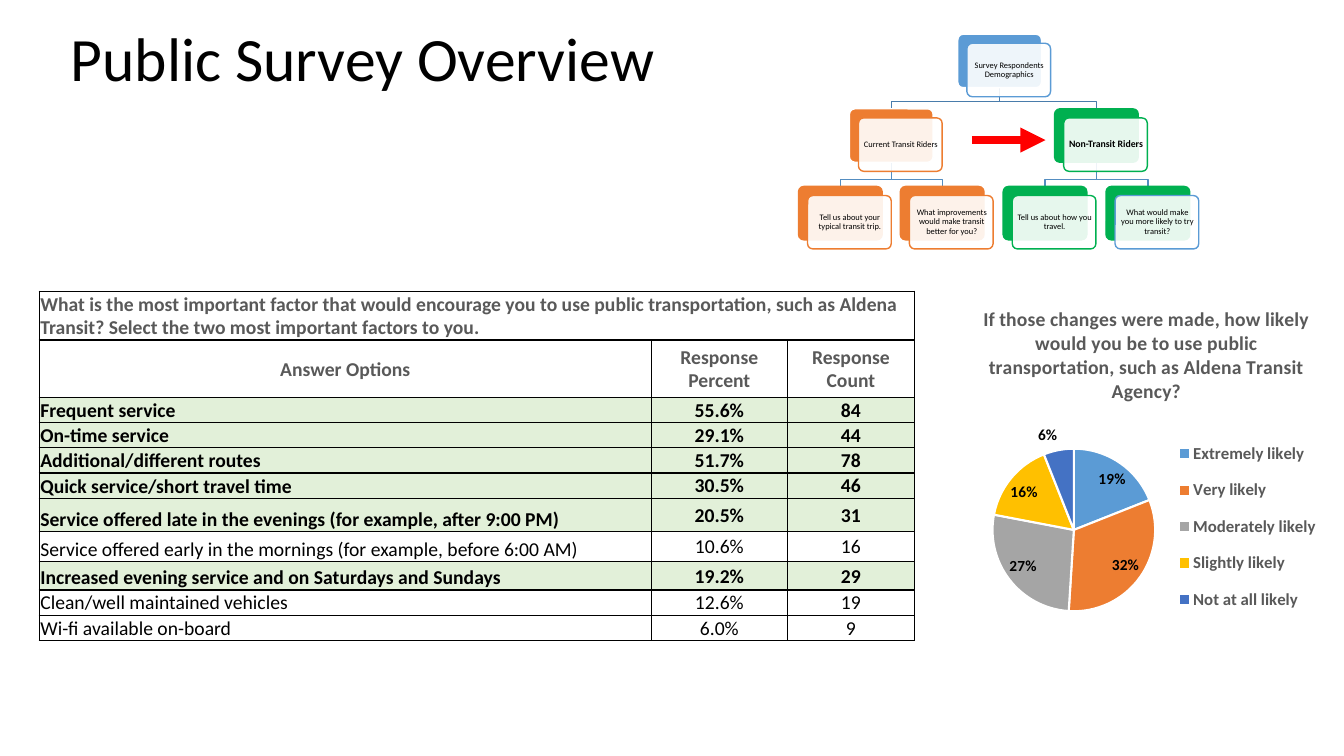
from lxml.etree import SubElement
from pptx import Presentation
from pptx.chart.data import CategoryChartData
from pptx.dml.color import RGBColor
from pptx.enum.chart import XL_CHART_TYPE, XL_LABEL_POSITION, XL_LEGEND_POSITION
from pptx.enum.shapes import MSO_CONNECTOR, MSO_SHAPE
from pptx.enum.text import MSO_ANCHOR, PP_ALIGN
from pptx.oxml import parse_xml
from pptx.oxml.ns import nsdecls, qn
from pptx.util import Inches, Pt

BLACK = RGBColor(0x00, 0x00, 0x00)
WHITE = RGBColor(0xFF, 0xFF, 0xFF)
GRAY = RGBColor(0x59, 0x59, 0x59)
BLUE = RGBColor(0x5B, 0x9B, 0xD5)
ORANGE = RGBColor(0xED, 0x7D, 0x31)
GREEN = RGBColor(0x00, 0xB0, 0x50)
RED = RGBColor(0xFF, 0x00, 0x00)
PALE_GREEN = RGBColor(0xE2, 0xF0, 0xD9)
UPPER_LINK = RGBColor(0x49, 0x7C, 0xAB)
LOWER_LINK = RGBColor(0x53, 0x8D, 0xC1)
SLICE_COLORS = [BLUE, ORANGE, RGBColor(0xA5, 0xA5, 0xA5),
                RGBColor(0xFF, 0xC0, 0x00), RGBColor(0x44, 0x72, 0xC4)]

CARD_WIDTH, CARD_HEIGHT, CARD_OFFSET = 0.83, 0.53, 0.09
LEVEL_TOPS = [0.34, 1.08, 1.85]
LEAF_LEFTS = [7.92, 8.93, 9.95, 10.97]

QUESTION = ("What is the most important factor that would encourage you to use public "
            "transportation, such as Aldena Transit? Select the two most important "
            "factors to you.")
HEADINGS = ["Answer Options", "Response Percent", "Response Count"]
ANSWERS = [  # option, percent, count, highlighted
    ("Frequent service", "55.6%", "84", True),
    ("On-time service", "29.1%", "44", True),
    ("Additional/different routes", "51.7%", "78", True),
    ("Quick service/short travel time", "30.5%", "46", True),
    ("Service offered late in the evenings (for example, after 9:00 PM)",
     "20.5%", "31", True),
    ("Service offered early in the mornings (for example, before 6:00 AM)",
     "10.6%", "16", False),
    ("Increased evening service and on Saturdays and Sundays", "19.2%", "29", True),
    ("Clean/well maintained vehicles", "12.6%", "19", False),
    ("Wi-fi available on-board", "6.0%", "9", False),
]
COLUMN_WIDTHS = [6.07, 1.35, 1.26]
ROW_HEIGHTS = [0.48, 0.57, 0.25, 0.25, 0.25, 0.25, 0.33, 0.3, 0.28, 0.25, 0.25]
LIKELIHOOD = {"Extremely likely": 19, "Very likely": 32, "Moderately likely": 27,
              "Slightly likely": 16, "Not at all likely": 6}
CHART_TITLE = ("If those changes were made, how likely would you be to use public "
               "transportation, such as Aldena Transit Agency?")


def set_font(font, size, color, bold=False):
    font.name = "Calibri"
    font.size = Pt(size)
    font.color.rgb = color
    font.bold = bold


def add_title(page, text):
    title = page.shapes.title
    title.left, title.top = Inches(0.6), Inches(0.1)
    title.width, title.height = Inches(12), Inches(1.02)
    title.text_frame.text = text
    title.text_frame.vertical_anchor = MSO_ANCHOR.MIDDLE
    para = title.text_frame.paragraphs[0]
    para.alignment = PP_ALIGN.LEFT
    para.line_spacing = 0.9
    set_font(para.font, 44, BLACK)


def add_rounded_box(page, left, top, fill, line):
    box = page.shapes.add_shape(MSO_SHAPE.ROUNDED_RECTANGLE, Inches(left), Inches(top),
                                Inches(CARD_WIDTH), Inches(CARD_HEIGHT))
    box.adjustments[0] = 0.1
    box.shadow.inherit = False
    box.fill.solid()
    box.fill.fore_color.rgb = fill
    box.line.color.rgb = line
    box.line.width = Pt(1)
    return box


def add_card(page, left, level, text, fill, back_line, front_line, size=6, bold=False):
    """Add a coloured box with a translucent text box set off in front of it."""
    top = LEVEL_TOPS[level]
    add_rounded_box(page, left, top, fill, back_line)
    front = add_rounded_box(page, left + CARD_OFFSET, top + CARD_OFFSET, WHITE, front_line)
    color = front.fill._xPr.find(qn("a:solidFill"))[0]
    SubElement(color, qn("a:alpha")).set("val", "90000")
    frame = front.text_frame
    frame.word_wrap = True
    frame.vertical_anchor = MSO_ANCHOR.MIDDLE
    frame.margin_left, frame.margin_right = Inches(0.03), Inches(0.02)
    frame.margin_top = frame.margin_bottom = Inches(0.03)
    frame.text = text
    para = frame.paragraphs[0]
    para.alignment = PP_ALIGN.CENTER
    para.line_spacing = 0.9
    set_font(para.font, size, BLACK, bold)


def add_link(page, parent_left, child_left, child_level, color):
    """Add a bent line from the foot of a parent card to the head of its child."""
    start_x, end_x = parent_left + CARD_WIDTH / 2, child_left + CARD_WIDTH / 2
    start_y, end_y = LEVEL_TOPS[child_level - 1] + CARD_HEIGHT, LEVEL_TOPS[child_level]
    bend_y = end_y - 0.07
    builder = page.shapes.build_freeform(Inches(start_x), Inches(start_y))
    builder.add_line_segments([(Inches(x), Inches(y)) for x, y in
                               [(start_x, bend_y), (end_x, bend_y), (end_x, end_y)]],
                              close=False)
    link = builder.convert_to_shape()
    link.shadow.inherit = False
    link.fill.background()
    link.line.color.rgb = color
    link.line.width = Pt(1)


def add_respondent_tree(page):
    root, riders, others = 9.5, sum(LEAF_LEFTS[:2]) / 2, sum(LEAF_LEFTS[2:]) / 2
    for i, leaf in enumerate(LEAF_LEFTS):
        add_link(page, riders if i < 2 else others, leaf, 2, LOWER_LINK)
    for branch in (riders, others):
        add_link(page, root, branch, 1, UPPER_LINK)

    add_card(page, root, 0, "Survey Respondents Demographics", BLUE, WHITE, BLUE)
    add_card(page, riders, 1, "Current Transit Riders", ORANGE, WHITE, ORANGE)
    add_card(page, others, 1, "Non-Transit Riders", GREEN, GREEN, GREEN, 7, True)
    for left, text, fill, front_line in zip(
            LEAF_LEFTS,
            ["Tell us about your typical transit trip.",
             "What improvements would make transit better for you?",
             "Tell us about how you travel.",
             "What would make you more likely to try transit?"],
            [ORANGE, ORANGE, GREEN, GREEN], [ORANGE, ORANGE, GREEN, BLUE]):
        add_card(page, left, 2, text, fill, fill, front_line)


def add_arrow(page):
    arrow = page.shapes.add_connector(MSO_CONNECTOR.STRAIGHT, Inches(9.64), Inches(1.39),
                                      Inches(10.37), Inches(1.39))
    arrow.line.color.rgb = RED
    arrow.line.width = Pt(6)
    SubElement(arrow.line._get_or_add_ln(), qn("a:tailEnd")).set("type", "triangle")
    SubElement(arrow._element.spPr, qn("a:effectLst"))


def fill_cell(cell, text, color, bold, centered, anchor=MSO_ANCHOR.MIDDLE, fill=None):
    cell.margin_left = cell.margin_right = cell.margin_top = Inches(0.01)
    cell.margin_bottom = 0
    cell.vertical_anchor = anchor
    for side in ("lnL", "lnR", "lnT", "lnB"):
        cell._tc.get_or_add_tcPr().append(parse_xml(
            f'<a:{side} {nsdecls("a")} w="12700"><a:solidFill><a:srgbClr val="{BLACK}"/>'
            f'</a:solidFill></a:{side}>'))
    if fill is None:
        cell.fill.background()
    else:
        cell.fill.solid()
        cell.fill.fore_color.rgb = fill
    cell.text = text
    para = cell.text_frame.paragraphs[0]
    para.alignment = PP_ALIGN.CENTER if centered else PP_ALIGN.LEFT
    set_font(para.font, 14, color, bold)


def add_answer_table(page):
    table = page.shapes.add_table(len(ROW_HEIGHTS), len(COLUMN_WIDTHS), Inches(0.39),
                                  Inches(2.89), Inches(8.68), Inches(3.46)).table
    table.first_row = table.horz_banding = False
    for column, width in zip(table.columns, COLUMN_WIDTHS):
        column.width = Inches(width)
    for row, height in zip(table.rows, ROW_HEIGHTS):
        row.height = Inches(height)
    table.cell(0, 0).merge(table.cell(0, 2))
    for i, text in enumerate([QUESTION, "", ""]):
        fill_cell(table.cell(0, i), text, GRAY, True, False)
    for i, heading in enumerate(HEADINGS):
        fill_cell(table.cell(1, i), heading, GRAY, True, True)
    for row, (*texts, highlighted) in enumerate(ANSWERS, start=2):
        for i, text in enumerate(texts):
            fill_cell(table.cell(row, i), text, BLACK, highlighted, i > 0,
                      MSO_ANCHOR.MIDDLE if i else MSO_ANCHOR.BOTTOM,
                      PALE_GREEN if highlighted else None)


def set_layout(element, index, target, **fractions):
    """Place a chart part by fractions of the chart's size."""
    for old in element.findall(qn("c:layout")):
        element.remove(old)
    layout = parse_xml(f'<c:layout {nsdecls("c")}><c:manualLayout/></c:layout>')
    settings = {"layoutTarget": target, "xMode": "edge", "yMode": "edge", **fractions}
    for name, value in settings.items():
        if value is not None:
            SubElement(layout[0], qn(f"c:{name}")).set("val", str(value))
    element.insert(index, layout)


def add_likelihood_pie(page):
    data = CategoryChartData()
    data.categories = list(LIKELIHOOD)
    data.add_series("Series 1", list(LIKELIHOOD.values()))
    chart = page.shapes.add_chart(XL_CHART_TYPE.PIE, Inches(9.19), Inches(2.87),
                                  Inches(4.36), Inches(3.34), data).chart
    set_font(chart.font, 10, BLACK)
    chart.has_title = True
    chart.chart_title.text_frame.text = CHART_TITLE
    set_font(chart.chart_title.text_frame.paragraphs[0].font, 14, GRAY, True)
    chart.has_legend = True
    chart.legend.position = XL_LEGEND_POSITION.RIGHT
    chart.legend.include_in_layout = False
    set_font(chart.legend.font, 12, GRAY, True)
    set_layout(chart.legend._element, 1, None, x=0.52, y=0.41, w=0.42, h=0.59)
    set_layout(chart._chartSpace.chart.plotArea, 0, "inner", x=0.15, y=0.47, w=0.37, h=0.49)

    plot = chart.plots[0]
    plot.vary_by_categories = True
    for i, color in enumerate(SLICE_COLORS):
        piece = plot.series[0].points[i].format
        piece.fill.solid()
        piece.fill.fore_color.rgb = color
        piece.line.color.rgb = WHITE
        piece.line.width = Pt(1.5)
    labels = plot.series[0].data_labels
    labels.show_percentage = True
    labels.show_value = False
    labels.number_format = "0%"
    labels.number_format_is_linked = False
    labels.position = XL_LABEL_POSITION.BEST_FIT
    set_font(labels.font, 11, BLACK, True)


def main():
    deck = Presentation()
    deck.slide_width, deck.slide_height = Inches(13.33), Inches(7.5)
    page = deck.slides.add_slide(deck.slide_layouts[5])
    add_title(page, "Public Survey Overview")
    add_respondent_tree(page)
    add_arrow(page)
    add_answer_table(page)
    add_likelihood_pie(page)
    deck.save("out.pptx")


if __name__ == "__main__":
    main()
